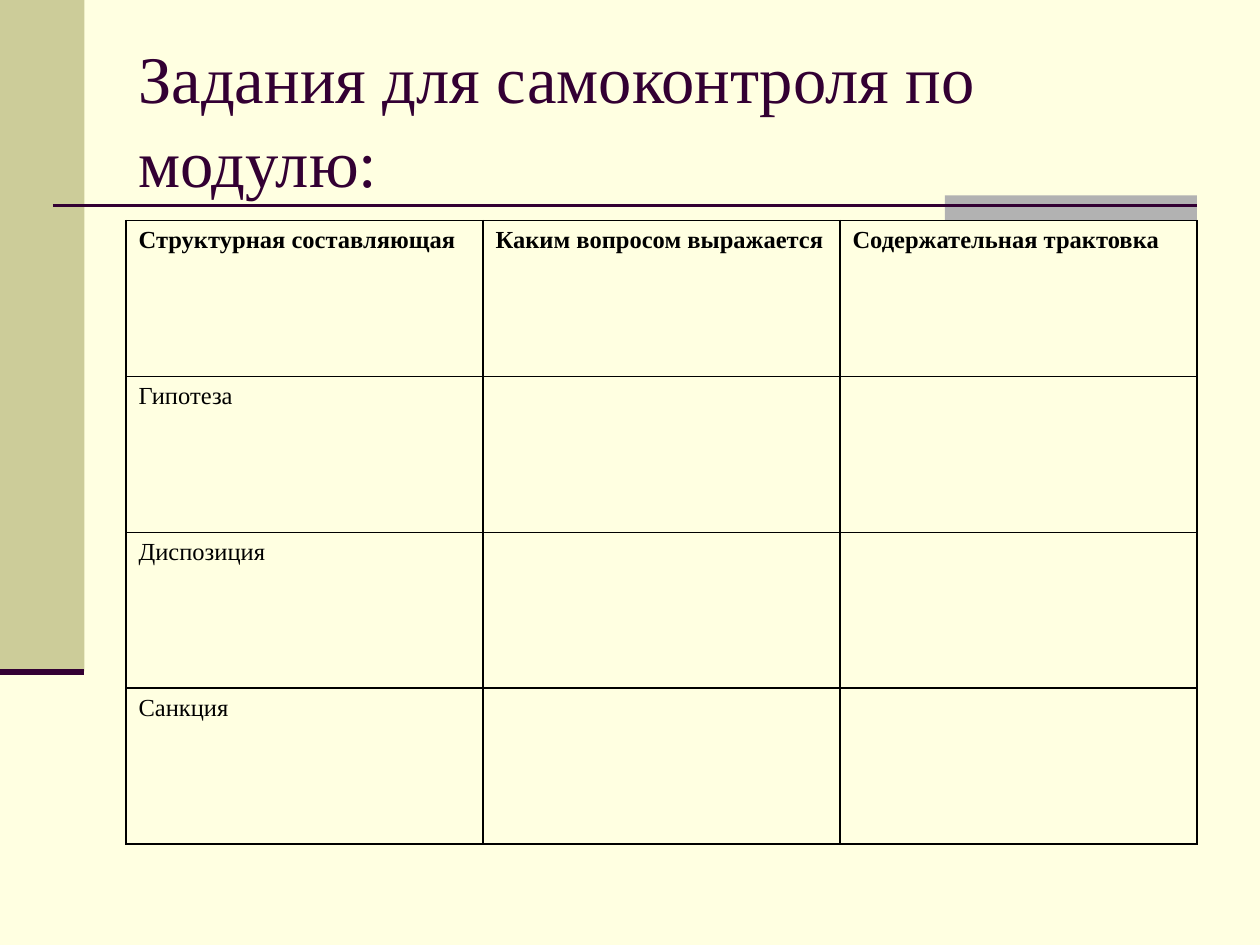
from dataclasses import dataclass

from lxml import etree
from pptx import Presentation
from pptx.dml.color import RGBColor
from pptx.enum.shapes import MSO_CONNECTOR, MSO_SHAPE
from pptx.enum.text import MSO_ANCHOR, PP_ALIGN
from pptx.oxml.ns import qn
from pptx.util import Inches, Pt

STRAIGHT = MSO_CONNECTOR.STRAIGHT
RECTANGLE = MSO_SHAPE.RECTANGLE
MIDDLE, TOP = MSO_ANCHOR.MIDDLE, MSO_ANCHOR.TOP
LEFT, JUSTIFY = PP_ALIGN.LEFT, PP_ALIGN.JUSTIFY


@dataclass(frozen=True)
class Theme:
    font: str = "Times New Roman"
    background: str = "FFFFE1"
    sidebar: str = "CCCC99"
    tab: str = "B2B2B2"
    accent: str = "330033"
    ink: str = "000000"
    title_size: float = 38
    cell_size: float = 14
    border: float = 1


@dataclass(frozen=True)
class Block:
    left: float
    top: float
    width: float
    height: float
    color: str


@dataclass(frozen=True)
class Rule:
    x1: float
    x2: float
    y: float
    weight: float


THEME = Theme()
BLOCKS = [
    Block(0, 0, 0.67, 5.33, THEME.sidebar),
    Block(7.5, 1.55, 2, 0.2, THEME.tab),
]
RULES = [Rule(0.42, 9.5, 1.63, 1.5), Rule(0, 0.67, 5.33, 3.5)]
TITLE = "Задания для самоконтроля по модулю:"
ROWS = [
    ["Структурная составляющая", "Каким вопросом выражается", "Содержательная трактовка"],
    ["Гипотеза", "", ""],
    ["Диспозиция", "", ""],
    ["Санкция", "", ""],
]


def rgb(color: str) -> RGBColor:
    return RGBColor.from_string(color)


def write(tf, text: str, *, size: float, color: str, bold: bool = False,
          align=LEFT, spacing: float = 1.0, hanging: float = 0) -> None:
    p = tf.paragraphs[0]
    p.alignment = align
    p.line_spacing = spacing
    if hanging:
        pPr = p._p.get_or_add_pPr()
        pPr.set("marL", str(Inches(hanging)))
        pPr.set("indent", str(-Inches(hanging)))
    r = p.add_run()
    r.text = text
    r.font.name = THEME.font
    r.font.size = Pt(size)
    r.font.bold = bold
    r.font.color.rgb = rgb(color)


def draw_block(s, block: Block) -> None:
    sp = s.shapes.add_shape(RECTANGLE, Inches(block.left), Inches(block.top),
                            Inches(block.width), Inches(block.height))
    sp.shadow.inherit = False
    sp.fill.solid()
    sp.fill.fore_color.rgb = rgb(block.color)
    sp.line.fill.background()


def draw_rule(s, rule: Rule) -> None:
    line = s.shapes.add_connector(STRAIGHT, Inches(rule.x1), Inches(rule.y),
                                  Inches(rule.x2), Inches(rule.y))
    line.line.color.rgb = rgb(THEME.accent)
    line.line.width = Pt(rule.weight)
    etree.SubElement(line._element.spPr, qn("a:effectLst"))


def draw_title(s) -> None:
    sp = s.shapes.add_textbox(Inches(1), Inches(0.3), Inches(8.5), Inches(1.25))
    tf = sp.text_frame
    tf.word_wrap = True
    tf.vertical_anchor = MIDDLE
    write(tf, TITLE, size=THEME.title_size, color=THEME.accent, spacing=1.05)


def outline_cell(cell) -> None:
    tcPr = cell._tc.get_or_add_tcPr()
    for position, side in enumerate(("lnL", "lnR", "lnT", "lnB")):
        ln = etree.Element(qn(f"a:{side}"), w=str(Pt(THEME.border)))
        fill = etree.SubElement(ln, qn("a:solidFill"))
        etree.SubElement(fill, qn("a:srgbClr"), val=THEME.ink)
        tcPr.insert(position, ln)


def draw_table(s, rows: list[list[str]]) -> None:
    table = s.shapes.add_table(len(rows), len(rows[0]), Inches(1), Inches(1.75),
                               Inches(8.5), Inches(4.95)).table
    table.horz_banding = False
    for i, row in enumerate(rows):
        for j, text in enumerate(row):
            cell = table.cell(i, j)
            cell.fill.background()
            cell.vertical_anchor = TOP
            outline_cell(cell)
            if text:
                write(cell.text_frame, text, size=THEME.cell_size, color=THEME.ink,
                      bold=i == 0, align=JUSTIFY, hanging=0.38)


def main() -> None:
    prs = Presentation()
    prs.slide_width, prs.slide_height = Inches(10), Inches(7.5)
    s = prs.slides.add_slide(prs.slide_layouts[6])
    s.background.fill.solid()
    s.background.fill.fore_color.rgb = rgb(THEME.background)
    for block in BLOCKS:
        draw_block(s, block)
    for rule in RULES:
        draw_rule(s, rule)
    draw_title(s)
    draw_table(s, ROWS)
    prs.save("out.pptx")


if __name__ == "__main__":
    main()
